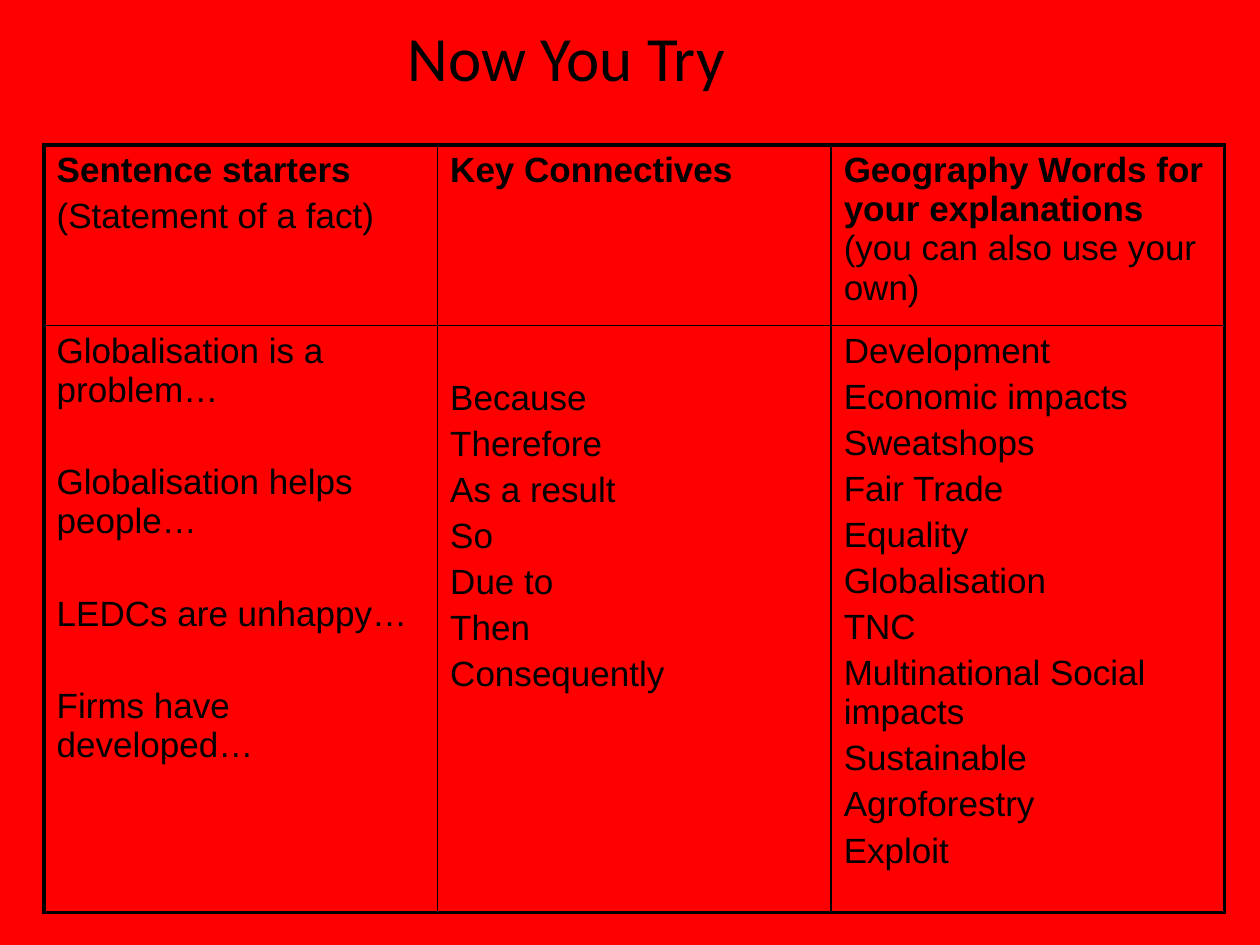
from lxml import etree
from pptx import Presentation
from pptx.dml.color import RGBColor
from pptx.enum.text import MSO_ANCHOR, PP_ALIGN
from pptx.oxml.ns import qn
from pptx.util import Inches, Pt

CENTER, LEFT = PP_ALIGN.CENTER, PP_ALIGN.LEFT
MIDDLE = MSO_ANCHOR.MIDDLE
RED = RGBColor(0xFF, 0x00, 0x00)
BLACK = RGBColor(0x00, 0x00, 0x00)

BLANK_LAYOUT = 6
OUTER_LINE, INNER_LINE = 2.25, 1
LINE_GAP, STARTER_GAP = 4, 30.4

# Each paragraph is a list of (text, bold) runs
HEADINGS = [
    [[("Sentence starters", True)], [("(Statement of a fact)", False)]],
    [[("Key Connectives", True)]],
    [[("Geography Words for your explanations ", True),
      ("(you can also use your own)", False)]],
]
STARTERS = ["Globalisation is a problem…", "Globalisation helps people…",
            "LEDCs are unhappy…", "Firms have developed…"]
CONNECTIVES = ["Because", "Therefore", "As a result", "So", "Due to", "Then",
               "Consequently"]
GEOGRAPHY_WORDS = ["Development", "Economic impacts", "Sweatshops",
                   "Fair Trade", "Equality", "Globalisation", "TNC",
                   "Multinational Social impacts", "Sustainable",
                   "Agroforestry", "Exploit"]
# Words, gap between paragraphs (pt), top margin (in)
WORD_LISTS = [(STARTERS, STARTER_GAP, 0.05),
              (CONNECTIVES, LINE_GAP, 0.42),
              (GEOGRAPHY_WORDS, LINE_GAP, 0.05)]


def write(frame, paragraphs, size=20, font="Arial", align=LEFT, gap=LINE_GAP):
    frame.word_wrap = True
    for index, runs in enumerate(paragraphs):
        paragraph = frame.add_paragraph() if index else frame.paragraphs[0]
        paragraph.alignment = align
        paragraph.space_before = Pt(gap if index else 0)
        for text, bold in runs:
            run = paragraph.add_run()
            run.text = text
            run.font.size, run.font.name = Pt(size), font
            run.font.bold = bold
            run.font.color.rgb = BLACK


def set_borders(cell, widths):
    """Draw left, right, top and bottom lines, in that order."""
    properties = cell._tc.get_or_add_tcPr()
    for position, (side, width) in enumerate(zip("LRTB", widths)):
        line = etree.Element(qn(f"a:ln{side}"), w=str(Pt(width)))
        fill = etree.SubElement(line, qn("a:solidFill"))
        etree.SubElement(fill, qn("a:srgbClr"), val=str(BLACK))
        properties.insert(position, line)


def add_title(slide, left, top, width, height):
    title = slide.shapes.add_textbox(left, top, width, height)
    title.text_frame.vertical_anchor = MIDDLE
    write(title.text_frame, [[("Now You Try", False)]],
          size=36, font="Calibri", align=CENTER)


def add_word_table(slide, left, top, width, row_heights):
    columns, rows = len(HEADINGS), len(row_heights)
    table = slide.shapes.add_table(rows, columns, left, top, width,
                                   sum(row_heights)).table
    table.first_row = table.horz_banding = False
    for row, height in zip(table.rows, row_heights):
        row.height = height

    # Heading row and word lists
    for column, (heading, (words, gap, margin)) in enumerate(
            zip(HEADINGS, WORD_LISTS)):
        write(table.cell(0, column).text_frame, heading)
        word_cell = table.cell(1, column)
        word_cell.margin_top = Inches(margin)
        write(word_cell.text_frame, [[(word, False)] for word in words],
              gap=gap)

    # Red cells, with a heavier line around the outside
    for row in range(rows):
        for column in range(columns):
            cell = table.cell(row, column)
            cell.fill.solid()
            cell.fill.fore_color.rgb = RED
            on_edge = (column == 0, column == columns - 1,
                       row == 0, row == rows - 1)
            set_borders(cell, [OUTER_LINE if edge else INNER_LINE
                               for edge in on_edge])


def main():
    deck = Presentation()
    deck.slide_width, deck.slide_height = Inches(10), Inches(7.5)
    slide = deck.slides.add_slide(deck.slide_layouts[BLANK_LAYOUT])
    slide.background.fill.solid()
    slide.background.fill.fore_color.rgb = RED
    add_title(slide, Inches(0.83), Inches(0.21), Inches(7.33), Inches(0.47))
    add_word_table(slide, Inches(0.35), Inches(1.15), Inches(9.37),
                   [Inches(1.2), Inches(4.63)])
    deck.save("out.pptx")


if __name__ == "__main__":
    main()
